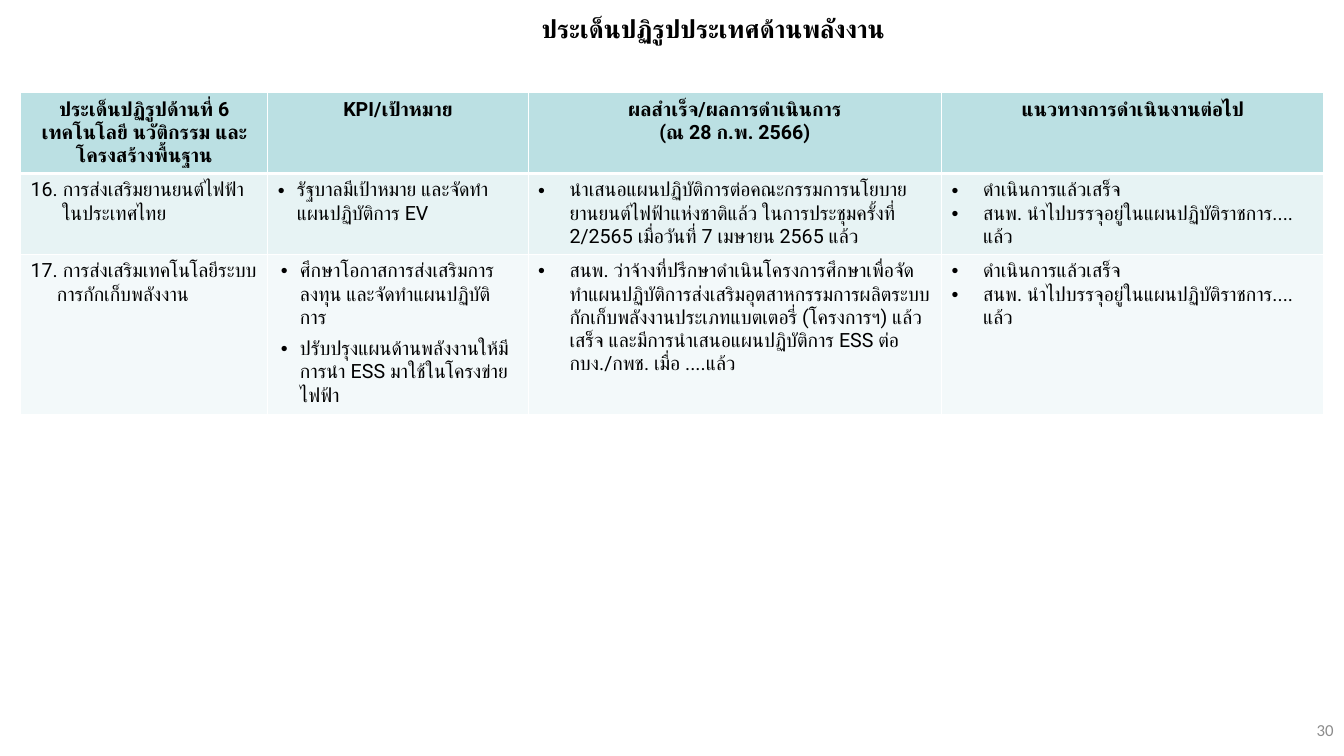
from lxml import etree
from pptx import Presentation
from pptx.dml.color import RGBColor
from pptx.enum.text import MSO_ANCHOR, MSO_AUTO_SIZE, PP_ALIGN
from pptx.oxml.ns import qn
from pptx.util import Cm, Pt

LEFT, CENTER, RIGHT = PP_ALIGN.LEFT, PP_ALIGN.CENTER, PP_ALIGN.RIGHT
TOP = MSO_ANCHOR.TOP
FIT_SHAPE = MSO_AUTO_SIZE.SHAPE_TO_FIT_TEXT

BLACK = RGBColor(0x00, 0x00, 0x00)
WHITE = RGBColor(0xFF, 0xFF, 0xFF)
GREY = RGBColor(0x8C, 0x8C, 0x8C)
ROW_FILLS = [
    RGBColor(0xBB, 0xE0, 0xE3),
    RGBColor(0xE7, 0xF3, 0xF4),
    RGBColor(0xF3, 0xF9, 0xFA),
]

TITLE_FONT = {"name": "Roboto", "size": Pt(18), "bold": True}
HEADER_FONT = {"name": "Roboto", "size": Pt(14), "bold": True}
BODY_FONT = {"name": "Roboto", "size": Pt(14), "bold": False}
NUMBER_FONT = {"name": "Calibri", "size": Pt(12), "bold": False}

COLUMN_WIDTHS = [Cm(6.23), Cm(6.56), Cm(10.42), Cm(9.63)]
ROW_HEIGHTS = [Cm(2), Cm(2.04), Cm(4.04)]
NARROW, MEDIUM, WIDE = Cm(0.48), Cm(0.66), Cm(0.79)

HEADERS = [
    ["ประเด็นปฏิรูปด้านที่ 6 เทคโนโลยี นวัติกรรม และโครงสร้างพื้นฐาน"],
    ["KPI/เป้าหมาย"],
    ["ผลสำเร็จ/ผลการดำเนินการ", "(ณ 28 ก.พ. 2566)"],
    ["แนวทางการดำเนินงานต่อไป"],
]
NEXT_STEPS = [
    "ดำเนินการแล้วเสร็จ",
    "สนพ. นำไปบรรจุอยู่ในแผนปฏิบัติราชการ.... แล้ว",
]
ISSUES = [
    {
        "name": "16. การส่งเสริมยานยนต์ไฟฟ้าในประเทศไทย",
        "indent": WIDE,
        "targets": ["รัฐบาลมีเป้าหมาย และจัดทำแผนปฏิบัติการ EV"],
        "target_margin": Cm(0.25),
        "result": "นำเสนอแผนปฏิบัติการต่อคณะกรรมการนโยบายยานยนต์ไฟฟ้าแห่งชาติแล้ว "
                  "ในการประชุมครั้งที่ 2/2565 เมื่อวันที่ 7 เมษายน 2565 แล้ว",
    },
    {
        "name": "17. การส่งเสริมเทคโนโลยีระบบการกักเก็บพลังงาน",
        "indent": MEDIUM,
        "targets": [
            "ศึกษาโอกาสการส่งเสริมการลงทุน และจัดทำแผนปฏิบัติการ",
            "ปรับปรุงแผนด้านพลังงานให้มีการนำ ESS มาใช้ในโครงข่ายไฟฟ้า",
        ],
        "target_margin": Cm(0.33),
        "result": "สนพ. ว่าจ้างที่ปรึกษาดำเนินโครงการศึกษาเพื่อจัดทำแผนปฏิบัติการ"
                  "ส่งเสริมอุตสาหกรรมการผลิตระบบกักเก็บพลังงานประเภทแบตเตอรี่ "
                  "(โครงการฯ) แล้วเสร็จ และมีการนำเสนอแผนปฏิบัติการ ESS ต่อ "
                  "กบง./กพช. เมื่อ ....แล้ว",
    },
]


def set_values(target, values):
    for name, value in values.items():
        setattr(target, name, value)


def write_para(para, text, font, color, align=LEFT):
    para.alignment = align
    span = para.add_run()
    span.text = text
    set_values(span.font, font)
    span.font.color.rgb = color
    complex_font = etree.SubElement(span.font._element, qn("a:cs"))
    complex_font.set("typeface", font["name"])


def hang_para(para, indent, bullet):
    properties = para._p.get_or_add_pPr()
    properties.set("marL", str(indent))
    properties.set("indent", str(-indent))
    if bullet:
        etree.SubElement(properties, qn("a:buFont")).set("typeface", "Arial")
        etree.SubElement(properties, qn("a:buChar")).set("char", "•")


def write_cell(cell, texts, font, align=LEFT, indent=None, bullet=False, gap=0):
    frame = cell.text_frame
    for index, text in enumerate(texts):
        para = frame.add_paragraph() if index else frame.paragraphs[0]
        write_para(para, text, font, BLACK, align)
        if index and gap:
            para.space_before = Pt(gap)
        if indent:
            hang_para(para, indent, bullet)


def add_borders(cell, bottom_width):
    properties = cell._tc.get_or_add_tcPr()
    widths = {"lnL": 1, "lnR": 1, "lnT": 1, "lnB": bottom_width}
    for index, (side, width) in enumerate(widths.items()):
        line = etree.Element(qn(f"a:{side}"), w=str(Pt(width)))
        fill = etree.SubElement(line, qn("a:solidFill"))
        etree.SubElement(fill, qn("a:srgbClr")).set("val", str(WHITE))
        properties.insert(index, line)


def add_title(page, text):
    title = page.shapes.title
    set_values(title, {"left": Cm(9.12), "top": Cm(0.2),
                       "width": Cm(17.7), "height": Cm(1.02)})
    set_values(title.text_frame, {"word_wrap": True, "vertical_anchor": TOP,
                                  "auto_size": FIT_SHAPE})
    write_para(title.text_frame.paragraphs[0], text, TITLE_FONT, BLACK, CENTER)


def add_page_number(page, text):
    box = page.shapes.add_textbox(Cm(26.24), Cm(18), Cm(7.62), Cm(1.02))
    box.text_frame.word_wrap = True
    write_para(box.text_frame.paragraphs[0], text, NUMBER_FONT, GREY, RIGHT)


def add_grid(page):
    grid = page.shapes.add_table(
        len(ROW_HEIGHTS), len(COLUMN_WIDTHS), Cm(0.52), Cm(2.34),
        sum(COLUMN_WIDTHS), sum(ROW_HEIGHTS)).table
    for column, width in zip(grid.columns, COLUMN_WIDTHS):
        column.width = width
    for index, (row, height) in enumerate(zip(grid.rows, ROW_HEIGHTS)):
        row.height = height
        for cell in row.cells:
            cell.fill.solid()
            cell.fill.fore_color.rgb = ROW_FILLS[index]
            add_borders(cell, 1 if index else 3)
    return grid


def add_reform_table(page):
    grid = add_grid(page)
    for column, texts in enumerate(HEADERS):
        write_cell(grid.cell(0, column), texts, HEADER_FONT, CENTER)
    for row, issue in enumerate(ISSUES, start=1):
        name, target, result, next_step = (grid.cell(row, i) for i in range(4))
        write_cell(name, [issue["name"]], BODY_FONT, indent=issue["indent"])
        set_values(target, {"margin_left": issue["target_margin"],
                            "margin_right": issue["target_margin"]})
        write_cell(target, issue["targets"], BODY_FONT,
                   indent=NARROW, bullet=True, gap=6)
        write_cell(result, [issue["result"]], BODY_FONT, indent=WIDE, bullet=True)
        write_cell(next_step, NEXT_STEPS, BODY_FONT, indent=WIDE, bullet=True)


def main():
    deck = Presentation()
    set_values(deck, {"slide_width": Cm(33.87), "slide_height": Cm(19.05)})
    page = deck.slides.add_slide(deck.slide_layouts[5])
    add_title(page, "ประเด็นปฏิรูปประเทศด้านพลังงาน")
    add_reform_table(page)
    add_page_number(page, "30")
    deck.save("out.pptx")


if __name__ == "__main__":
    main()
